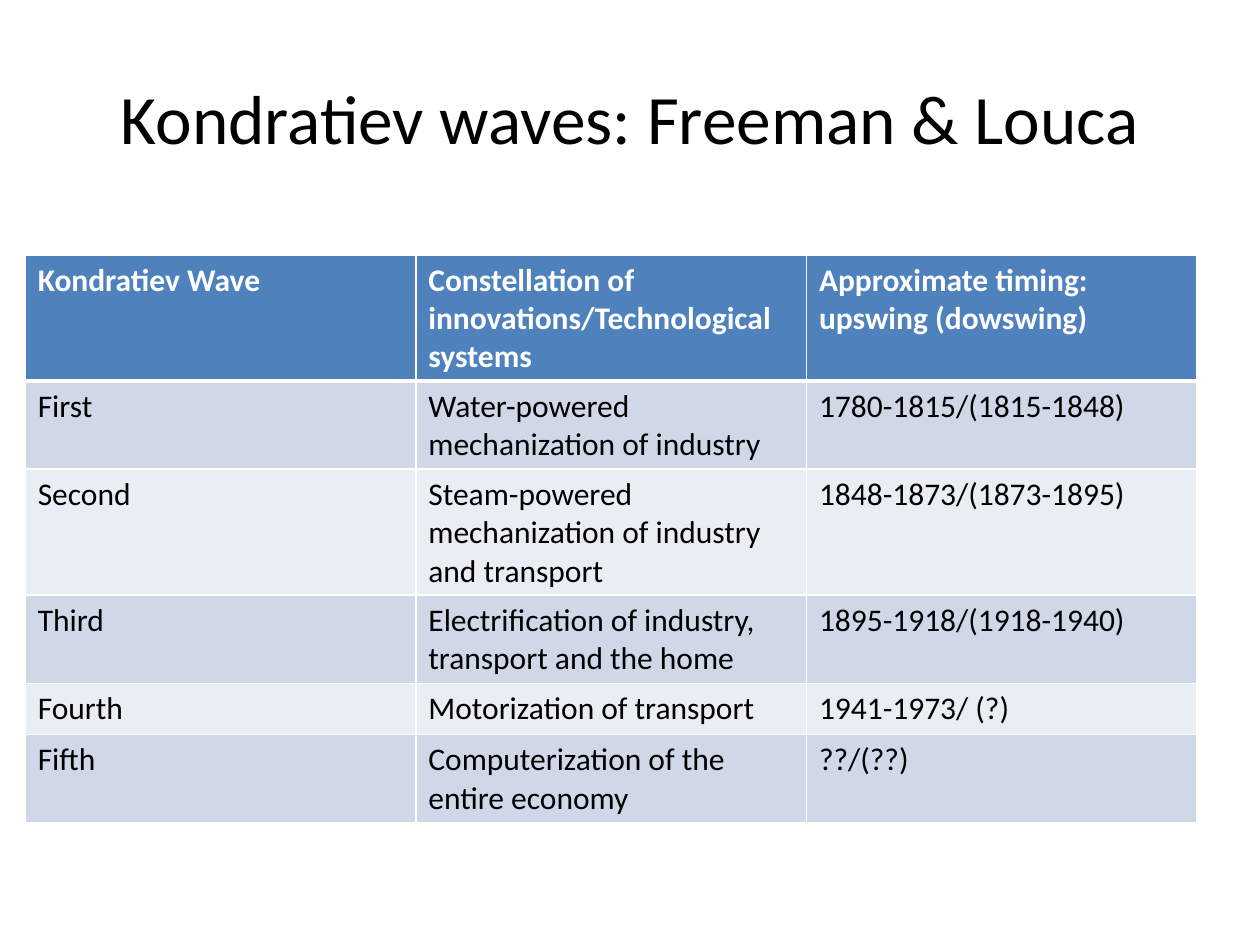
from dataclasses import dataclass
from typing import Any

from lxml.etree import SubElement
from pptx import Presentation
from pptx.dml.color import RGBColor
from pptx.enum.text import MSO_ANCHOR, PP_ALIGN
from pptx.oxml.ns import qn
from pptx.util import Pt

WAVES = [
    ("Kondratiev Wave", "Constellation of innovations/Technological systems",
     "Approximate timing: upswing (dowswing)"),
    ("First", "Water-powered mechanization of industry", "1780-1815/(1815-1848)"),
    ("Second", "Steam-powered mechanization of industry and transport",
     "1848-1873/(1873-1895)"),
    ("Third", "Electrification of industry, transport and the home",
     "1895-1918/(1918-1940)"),
    ("Fourth", "Motorization of transport", "1941-1973/ (?)"),
    ("Fifth", "Computerization of the entire economy", "??/(??)"),
]


def color(value):
    return RGBColor.from_string(value)


@dataclass
class SlideBuilder:
    slide: Any
    font: str = "Calibri"
    dark: str = "000000"
    light: str = "FFFFFF"
    header: str = "4F81BD"
    bands: tuple = ("D0D8E8", "E9EDF4")

    def add_text(self, frame, text, tint, **formats):
        span = frame.paragraphs[0].add_run()
        span.text = text
        for name, value in {"name": self.font, **formats}.items():
            setattr(span.font, name, value)
        span.font.color.rgb = color(tint)

    def title(self, text, left, top, width, height):
        box = self.slide.shapes.add_textbox(Pt(left), Pt(top), Pt(width), Pt(height))
        frame = box.text_frame
        frame.word_wrap = True
        frame.vertical_anchor = MSO_ANCHOR.MIDDLE
        frame.paragraphs[0].alignment = PP_ALIGN.CENTER
        self.add_text(frame, text, self.dark, size=Pt(39.6))

    def borders(self, cell, **widths):
        """Draw solid cell edges; keywords L, R, T and B give widths in points."""
        properties = cell._tc.get_or_add_tcPr()
        for side, width in widths.items():
            line = SubElement(properties, qn(f"a:ln{side}"), w=str(Pt(width)))
            fill = SubElement(line, qn("a:solidFill"))
            SubElement(fill, qn("a:srgbClr"), val=self.light)

    def table(self, rows, left, top, column_width, row_height):
        columns = len(rows[0])
        table = self.slide.shapes.add_table(
            len(rows), columns, Pt(left), Pt(top),
            Pt(column_width * columns), Pt(row_height * len(rows))).table
        for column in table.columns:
            column.width = Pt(column_width)
        for r, texts in enumerate(rows):
            table.rows[r].height = Pt(row_height)
            is_header = r == 0
            fill = self.header if is_header else self.bands[(r - 1) % 2]
            tint = self.light if is_header else self.dark
            for c, text in enumerate(texts):
                cell = table.cell(r, c)
                self.borders(cell, L=1, R=1, T=3 if r == 1 else 1,
                             B=3 if is_header else 1)
                cell.fill.solid()
                cell.fill.fore_color.rgb = color(fill)
                self.add_text(cell.text_frame, text, tint, size=Pt(18), bold=is_header)


def main():
    deck = Presentation()
    deck.slide_width, deck.slide_height = Pt(720), Pt(540)
    page = SlideBuilder(deck.slides.add_slide(deck.slide_layouts[6]))
    page.title("Kondratiev waves: Freeman & Louca", 36, 21.6, 648, 90)
    page.table(WAVES, left=14.4, top=145.6, column_width=223.2, row_height=29.2)
    deck.save("out.pptx")


if __name__ == "__main__":
    main()
